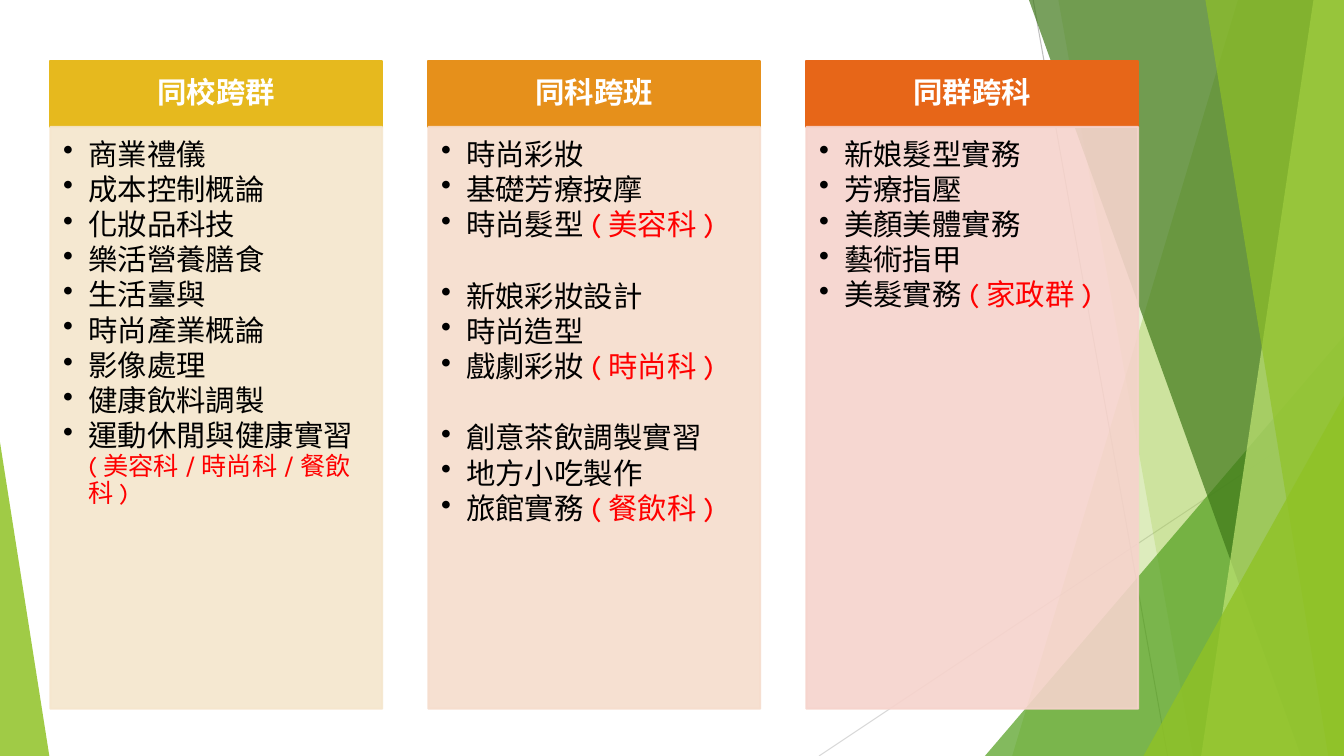
from pptx import Presentation
from pptx import util as u
from pptx.dml.color import RGBColor
from pptx.enum import lang, shapes, text
from pptx.oxml import ns
from lxml import etree

PX = 9525  # EMU per px: the slide is 1280 x 720 px
WIDTH, HEIGHT = 1280, 720
RED = "FF0000"

# Each list is made of groups; an item is (text, red note, note size)
COLUMNS = [
    ("同校跨群", "E6B91E", "F5E6CD", [[
        ("商業禮儀",), ("成本控制概論",), ("化妝品科技",), ("樂活營養膳食",),
        ("生活臺與",), ("時尚產業概論",), ("影像處理",), ("健康飲料調製",),
        ("運動休閒與健康實習", "(美容科/時尚科/餐飲科)", 18)]]),
    ("同科跨班", "E6901B", "F6DDCD", [
        [("時尚彩妝",), ("基礎芳療按摩",), ("時尚髮型", "(美容科)", 21)],
        [("新娘彩妝設計",), ("時尚造型",), ("戲劇彩妝", "(時尚科)", 21)],
        [("創意茶飲調製實習",), ("地方小吃製作",), ("旅館實務", "(餐飲科)", 21)]]),
    ("同群跨科", "E76618", "F6D3CC", [[
        ("新娘髮型實務",), ("芳療指壓",), ("美顏美體實務",), ("藝術指甲",),
        ("美髮實務", "(家政群)", 21)]]),
]


def px(*lengths):
    return [u.Emu(length * PX) for length in lengths]


def paint(color_format, color, opacity=100):
    """Set a solid fill's colour, with its opacity in percent."""
    color_format.solid()
    color_format.fore_color.rgb = RGBColor.from_string(color)
    if opacity < 100:
        rgb = color_format._xPr.find(".//" + ns.qn("a:srgbClr"))
        etree.SubElement(rgb, ns.qn("a:alpha"), val=str(opacity * 1000))


def style(shape, color, opacity=100, outline=0):
    shape.shadow.inherit = False
    paint(shape.fill, color, opacity)
    if outline:
        shape.line.width = u.Pt(outline)
        paint(shape.line.fill, color, opacity)
    else:
        shape.line.fill.background()


def set_font(paragraph, color, bold=False):
    font = paragraph.font
    font.name, font.size, font.bold = "Karla", u.Pt(21), bold
    font.color.rgb = RGBColor.from_string(color)
    font.language_id = lang.MSO_LANGUAGE_ID.TRADITIONAL_CHINESE
    paragraph.line_spacing = 0.9


# Green facets behind the columns
def add_ray(slide, start, end, color):
    ray = slide.shapes.add_connector(
        shapes.MSO_CONNECTOR.STRAIGHT, *px(*start, *end))
    ray.line.width = u.Pt(0.75)
    ray.line.color.rgb = RGBColor.from_string(color)
    etree.SubElement(ray._element.spPr, ns.qn("a:effectLst"))


def add_band(slide, top_x, bottom_x, color, opacity):
    """A full-height band from a slanted left edge to the slide's right edge."""
    builder = slide.shapes.build_freeform(top_x, 0, scale=PX)
    builder.add_line_segments([(WIDTH, 0), (WIDTH, HEIGHT), (bottom_x, HEIGHT)])
    style(builder.convert_to_shape(), color, opacity)


def add_corner(slide, x, y, width, apex, color, opacity):
    """A triangle that stands on the slide's bottom edge."""
    corner = slide.shapes.add_shape(
        shapes.MSO_SHAPE.ISOSCELES_TRIANGLE, *px(x, y, width, HEIGHT - y))
    corner.adjustments[0] = apex
    style(corner, color, opacity)


def add_facets(slide):
    add_ray(slide, (984, 0), (1112, HEIGHT), "BFBFBF")
    add_ray(slide, (WIDTH, 387), (780, HEIGHT), "D9D9D9")
    add_band(slide, 1179, 964, "90C226", 30)
    add_band(slide, 1008, 1136, "90C226", 20)
    add_corner(slide, 938, 320, 342, 1, "54A021", 72)
    add_band(slide, 980, 1239, "3F7819", 70)
    add_band(slide, 1251, 1144, "C0E474", 70)
    add_band(slide, 1148, 1265, "90C226", 65)
    add_corner(slide, 1089, 377, 191, 1, "90C226", 80)
    add_corner(slide, 0, 421, 47, 0, "90C226", 85)


# Columns: a heading above a bulleted course list
def add_panel(slide, box, color, opacity, margins, anchor):
    panel = slide.shapes.add_shape(shapes.MSO_SHAPE.RECTANGLE, *px(*box))
    style(panel, color, opacity, outline=1.5)
    frame = panel.text_frame
    frame.word_wrap = True
    frame.vertical_anchor = anchor
    (frame.margin_left, frame.margin_top,
     frame.margin_right, frame.margin_bottom) = px(*margins)
    return frame


def add_course(paragraph, name, note="", note_size=21):
    paragraph.alignment = text.PP_ALIGN.LEFT
    paragraph.space_after = u.Pt(2.5)
    set_font(paragraph, "000000")
    paragraph.add_run().text = name
    if note:
        note_run = paragraph.add_run()
        note_run.text = note
        note_run.font.size = u.Pt(note_size)
        note_run.font.color.rgb = RGBColor.from_string(RED)
    properties = paragraph._p.get_or_add_pPr()
    properties.set("marL", str(24 * PX))
    properties.set("indent", str(-24 * PX))
    bullet = etree.Element(ns.qn("a:buChar"), char="•")
    properties.find(ns.qn("a:defRPr")).addprevious(bullet)


def add_column(slide, box, heading, head_color, list_color, groups):
    x, y, width, height = box
    head_height = 63
    head = add_panel(slide, (x, y, width, head_height), head_color, 100,
                     (15, 9, 15, 9), text.MSO_ANCHOR.MIDDLE).paragraphs[0]
    head.text = heading
    head.alignment = text.PP_ALIGN.CENTER
    set_font(head, "FFFFFF", bold=True)

    courses = add_panel(
        slide, (x, y + head_height, width, height - head_height), list_color, 90,
        (12, 12, 15, 17), text.MSO_ANCHOR.TOP)
    paragraph = None
    for group in groups:
        for course in group:
            paragraph = courses.add_paragraph() if paragraph else courses.paragraphs[0]
            add_course(paragraph, *course)
        if group is not groups[-1]:
            paragraph.space_after = u.Pt(28.4)  # one line between groups


def main():
    deck = Presentation()
    deck.slide_width, deck.slide_height = px(WIDTH, HEIGHT)
    slide = deck.slides.add_slide(deck.slide_layouts[6])
    add_facets(slide)
    for index, column in enumerate(COLUMNS):
        add_column(slide, (48 + 360 * index, 58, 316, 617), *column)
    deck.save("out.pptx")


if __name__ == "__main__":
    main()
